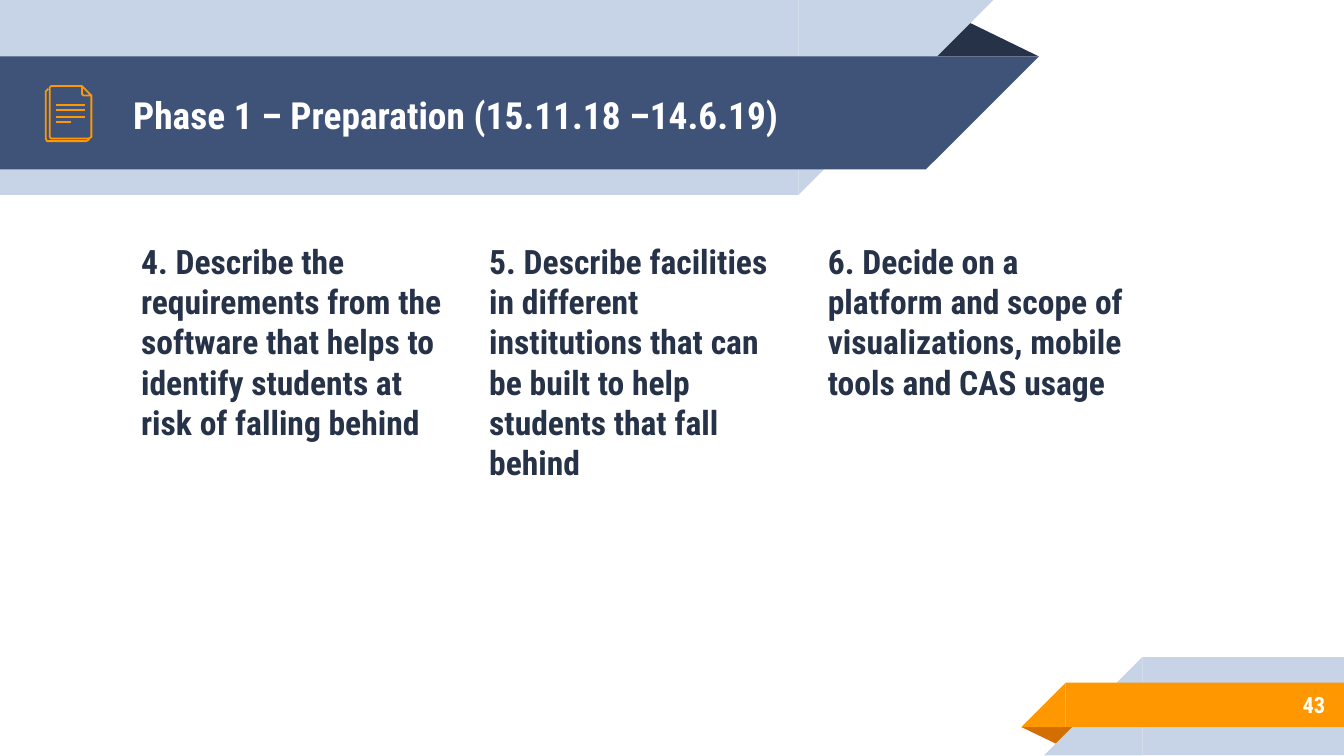
import pptx
import pptx.util
import pptx.dml.color
import pptx.enum.shapes
import pptx.enum.text
import pptx.oxml.ns
import lxml.etree

Inches = pptx.util.Inches
Pt = pptx.util.Pt
SHAPE = pptx.enum.shapes.MSO_SHAPE
ALIGN = pptx.enum.text.PP_ALIGN
ANCHOR = pptx.enum.text.MSO_ANCHOR
FONT = "Roboto Condensed"
COLORS = {
    "navy": "263248",
    "blue": "3F5378",
    "pale": "C7D3E6",
    "orange": "FF9800",
    "rust": "D26F00",
    "white": "FFFFFF",
}
TASKS = [
    (0.95, "4. Describe the requirements from the software that helps to identify "
           "students at risk of falling behind"),
    (3.54, "5. Describe facilities in different institutions that can be built to "
           "help students that fall behind"),
    (6.06, "6. Decide on a platform and scope of visualizations, mobile tools and "
           "CAS usage"),
]


def color(name):
    return pptx.dml.color.RGBColor.from_string(COLORS[name])


def add_block(slide, kind, box, fill, turn=0, flip=False):
    block = slide.shapes.add_shape(kind, *map(Inches, box))
    block.shadow.inherit = False
    block.fill.solid()
    block.fill.fore_color.rgb = color(fill)
    block.line.fill.background()
    block.rotation = turn
    if flip:
        block.element.spPr.xfrm.set("flipH", "1")
    return block


def add_fold(slide, box, fill, turn=0):
    fold = add_block(slide, SHAPE.ISOSCELES_TRIANGLE, box, fill, turn)
    fold.adjustments[0] = 0.324


def add_top(slide, width, top, height, fill):
    """Band from the left edge, slanting in at its lower right."""
    add_block(slide, SHAPE.RECTANGLE, (0, top, width, height), fill)
    add_block(slide, SHAPE.RIGHT_TRIANGLE, (width, top, height, height),
              fill, 180, True)


def add_foot(slide, left, top, height, fill):
    """Band to the right edge, slanting in at its upper left."""
    add_block(slide, SHAPE.RECTANGLE, (left, top, 10 - left, height), fill)
    add_block(slide, SHAPE.RIGHT_TRIANGLE, (left - height, top, height, height),
              fill, flip=True)


def set_text(shape, box, text, size, fill, anchor, align=ALIGN.LEFT, before=0):
    shape.left, shape.top, shape.width, shape.height = map(Inches, box)
    frame = shape.text_frame
    frame.text = text
    frame.word_wrap = True
    frame.auto_size = pptx.enum.text.MSO_AUTO_SIZE.NONE
    frame.vertical_anchor = anchor
    frame.margin_left = frame.margin_right = Inches(0.1)
    frame.margin_top = frame.margin_bottom = Inches(0.1)
    para = frame.paragraphs[0]
    para.alignment = align
    para.space_before = Pt(before)
    para.font.name = FONT
    para.font.size = Pt(size)
    para.font.bold = True
    para.font.color.rgb = color(fill)
    return para


def set_holder(holder, *args, **kwargs):
    """Fill a placeholder, without bullet, and bring it to the front."""
    para = set_text(holder, *args, **kwargs)
    props = para._p.get_or_add_pPr()
    props.set("marL", "0")
    props.set("indent", "0")
    mark = lxml.etree.Element(pptx.oxml.ns.qn("a:buNone"))
    props.find(pptx.oxml.ns.qn("a:spcBef")).addnext(mark)
    holder.element.getparent().append(holder.element)


def set_line(shape):
    shape.line.color.rgb = color("orange")
    shape.line.width = Pt(0.96)


def add_path(slide, points, close=False):
    spots = [(Inches(x), Inches(y)) for x, y in points]
    pen = slide.shapes.build_freeform(*spots[0])
    pen.add_line_segments(spots[1:], close=close)
    shape = pen.convert_to_shape()
    shape.shadow.inherit = False
    shape.fill.background()
    set_line(shape)


def add_rule(slide, left, right, y):
    rule = slide.shapes.add_connector(
        pptx.enum.shapes.MSO_CONNECTOR.STRAIGHT,
        Inches(left), Inches(y), Inches(right), Inches(y))
    set_line(rule)
    lxml.etree.SubElement(rule.element.spPr, pptx.oxml.ns.qn("a:effectLst"))


def add_icon(slide):
    add_path(slide, [(0.66, 1.03), (0.66, 1.04), (0.64, 1.05), (0.36, 1.05),
                     (0.35, 1.05), (0.34, 1.03), (0.34, 0.68), (0.35, 0.67),
                     (0.36, 0.66)])
    add_path(slide, [(0.68, 0.71), (0.68, 1.01), (0.68, 1.02), (0.66, 1.03),
                     (0.38, 1.03), (0.37, 1.02), (0.37, 1.01), (0.37, 0.66),
                     (0.37, 0.65), (0.38, 0.64), (0.61, 0.64)])
    for right, y in [(0.53, 0.91), (0.63, 0.87), (0.63, 0.82), (0.63, 0.78)]:
        add_rule(slide, 0.42, right, y)
    add_path(slide, [(0.61, 0.7), (0.61, 0.64), (0.68, 0.71), (0.63, 0.71),
                     (0.62, 0.71)], close=True)


def main():
    deck = pptx.Presentation()
    deck.slide_width = Inches(10)
    deck.slide_height = Inches(10 * 9 / 16)
    slide = deck.slides.add_slide(deck.slide_layouts.get_by_name("Comparison"))
    title, *bodies = slide.placeholders

    add_fold(slide, (6.88, 0.14, 0.85, 0.28), "navy")
    add_top(slide, 5.94, 0, 1.45, "pale")
    add_top(slide, 6.89, 0.42, 0.84, "blue")
    add_fold(slide, (7.6, 5.41, 0.43, 0.14), "rust", 180)
    add_foot(slide, 8.5, 4.89, 0.73, "pale")
    add_foot(slide, 7.93, 5.08, 0.33, "orange")

    set_holder(title, (0.89, 0.43, 5.75, 0.84),
               "Phase 1 – Preparation (15.11.18 –14.6.19)",
               20, "white", ANCHOR.MIDDLE)
    for body, (left, text) in zip(bodies, TASKS):
        set_holder(body, (left, 1.69, 2.46, 2.96), text,
                   18, "navy", ANCHOR.TOP, before=6)
    for spare in bodies[len(TASKS):]:
        spare.element.getparent().remove(spare.element)

    box = (8.33, 5.07, 1.63, 0.35)
    number = slide.shapes.add_textbox(*map(Inches, box))
    set_text(number, box, "43", 12, "white", ANCHOR.MIDDLE, ALIGN.RIGHT)
    add_icon(slide)
    deck.save("out.pptx")


if __name__ == "__main__":
    main()
